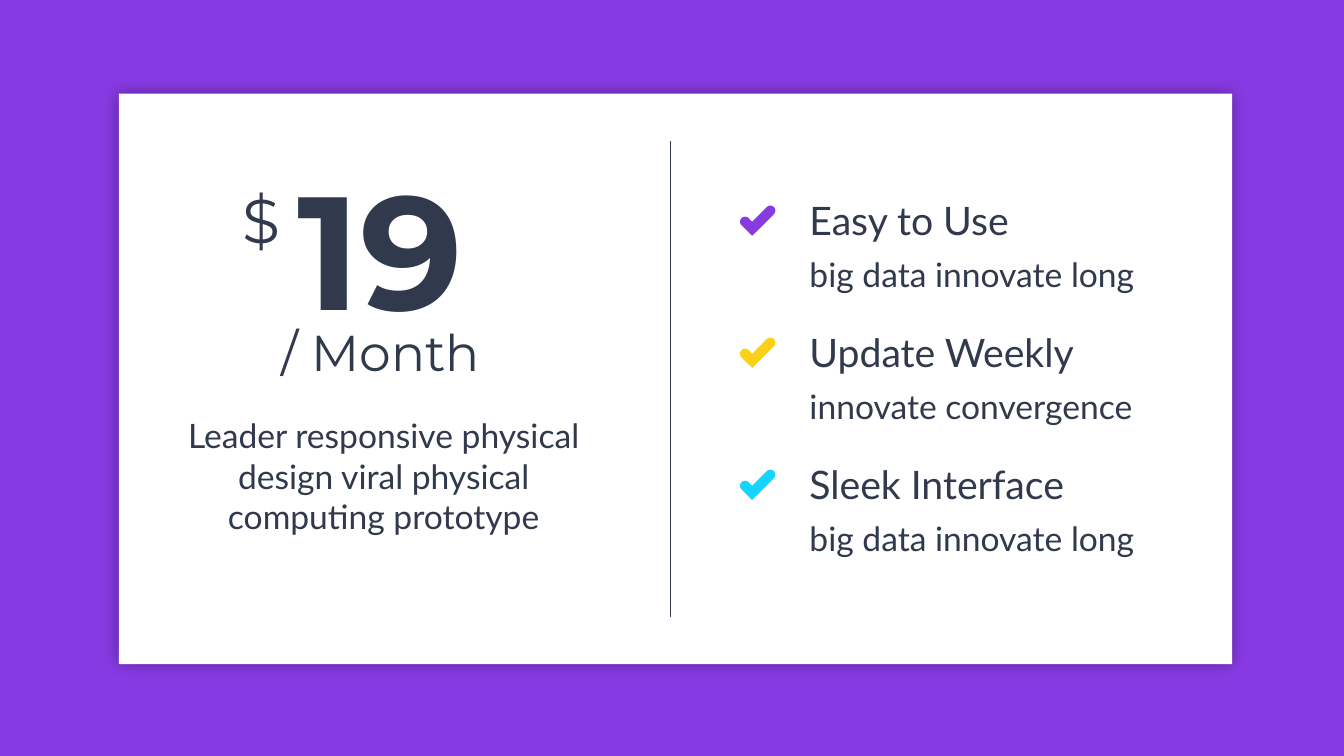
from dataclasses import dataclass
from math import cos, radians, sin

from lxml.etree import SubElement
from pptx import Presentation
from pptx.dml.color import RGBColor
from pptx.enum.shapes import MSO_CONNECTOR, MSO_SHAPE
from pptx.enum.text import MSO_ANCHOR, MSO_AUTO_SIZE, PP_ALIGN
from pptx.oxml.ns import qn
from pptx.shapes.base import BaseShape
from pptx.slide import Slide
from pptx.util import Inches, Pt

HUES = {
    "violet": "873AE2",
    "gold": "FCD015",
    "cyan": "17D3FF",
    "ink": "31394C",
    "white": "FFFFFF",
    "black": "000000",
}


@dataclass
class Label:
    text: str
    left: float
    top: float
    width: float
    height: float
    size: int
    font: str = "Lato"
    bold: bool = False
    align: PP_ALIGN = PP_ALIGN.CENTER


@dataclass
class Perk:
    name: str
    note: str
    hue: str


PRICE = Label("19", 2.17, 1.43, 3.2, 2.04, 115, "Montserrat", True)
LABELS = [
    Label("Leader responsive physical design viral physical computing prototype",
          1.71, 4.07, 4.19, 1.31, 24),
    Label("/ Month", 1.62, 3.14, 4.31, 0.71, 36, "Montserrat"),
    Label("$", 2.17, 1.76, 0.85, 0.84, 44, "Montserrat"),
]
PERKS = [
    Perk("Easy to Use", "big data innovate long", "violet"),
    Perk("Update Weekly", "innovate convergence", "gold"),
    Perk("Sleek Interface", "big data innovate long", "cyan"),
]
PERK_TOP = 1.9
PERK_STEP = 1.31


def tint(name: str) -> RGBColor:
    return RGBColor.from_string(HUES[name])


def fill_text(box: BaseShape, label: Label) -> None:
    box.left, box.top = Inches(label.left), Inches(label.top)
    box.width, box.height = Inches(label.width), Inches(label.height)
    frame = box.text_frame
    frame.word_wrap = True
    frame.auto_size = MSO_AUTO_SIZE.SHAPE_TO_FIT_TEXT
    frame.vertical_anchor = MSO_ANCHOR.TOP
    para = frame.paragraphs[0]
    para.alignment = label.align
    run = para.add_run()
    run.text = label.text
    run.font.name = label.font
    run.font.size = Pt(label.size)
    run.font.bold = label.bold
    run.font.color.rgb = tint("ink")


def add_label(shapes, label: Label) -> None:
    fill_text(shapes.add_textbox(0, 0, 0, 0), label)


def add_card(slide: Slide) -> None:
    card = slide.shapes.add_shape(
        MSO_SHAPE.RECTANGLE, Inches(1.18), Inches(0.93), Inches(11.04), Inches(5.66))
    card.fill.solid()
    card.fill.fore_color.rgb = tint("white")
    card.line.fill.background()
    card.shadow.inherit = False
    glow = card._element.spPr.find(qn("a:effectLst"))
    shade = SubElement(glow, qn("a:outerShdw"), blurRad=str(Pt(11)), dist="0",
                       dir="0", algn="ctr", rotWithShape="0")
    color = SubElement(shade, qn("a:srgbClr"), val=HUES["black"])
    SubElement(color, qn("a:alpha"), val="35000")


def add_rule(slide: Slide) -> None:
    rule = slide.shapes.add_connector(
        MSO_CONNECTOR.STRAIGHT, Inches(6.65), Inches(1.4), Inches(6.65), Inches(6.12))
    rule.line.color.rgb = tint("ink")
    rule.line.width = Pt(1.25)
    SubElement(rule._element.spPr, qn("a:effectLst"))


def arc(x: float, y: float, start: int) -> list[tuple[float, float]]:
    turns = [radians(start + step) for step in range(0, 181, 15)]
    return [(x + 0.05 * cos(turn), y + 0.05 * sin(turn)) for turn in turns]


def add_check(slide: Slide, left: float, top: float, hue: str) -> None:
    dots = arc(0.3, 0.05, -135) + [(0.12, 0.3)] + arc(0.05, 0.16, 135) + [(0.12, 0.16)]
    points = [(Inches(left + x), Inches(top + y)) for x, y in dots]
    pen = slide.shapes.build_freeform(*points[0])
    pen.add_line_segments(points[1:], close=True)
    check = pen.convert_to_shape()
    check.fill.solid()
    check.fill.fore_color.rgb = tint(hue)
    check.line.fill.background()
    check.shadow.inherit = False


def add_perk(slide: Slide, perk: Perk, top: float) -> None:
    group = slide.shapes.add_group_shape()
    add_label(group.shapes, Label(perk.note, 7.93, top + 0.57, 3.75, 0.5, 24,
                                  align=PP_ALIGN.LEFT))
    add_label(group.shapes, Label(perk.name, 7.93, top, 3.67, 0.57, 28,
                                  align=PP_ALIGN.LEFT))
    add_check(slide, 7.34, top + 0.14, perk.hue)


def main() -> None:
    deck = Presentation()
    deck.slide_width, deck.slide_height = Inches(13.33), Inches(7.5)
    slide = deck.slides.add_slide(deck.slide_layouts[5])
    slide.background.fill.solid()
    slide.background.fill.fore_color.rgb = tint("violet")
    add_card(slide)
    add_rule(slide)
    title = slide.shapes.title
    fill_text(title, PRICE)
    slide.shapes._spTree.append(title._element)
    for label in LABELS:
        add_label(slide.shapes, label)
    for row, perk in enumerate(PERKS):
        add_perk(slide, perk, PERK_TOP + row * PERK_STEP)
    deck.save("out.pptx")


if __name__ == "__main__":
    main()
